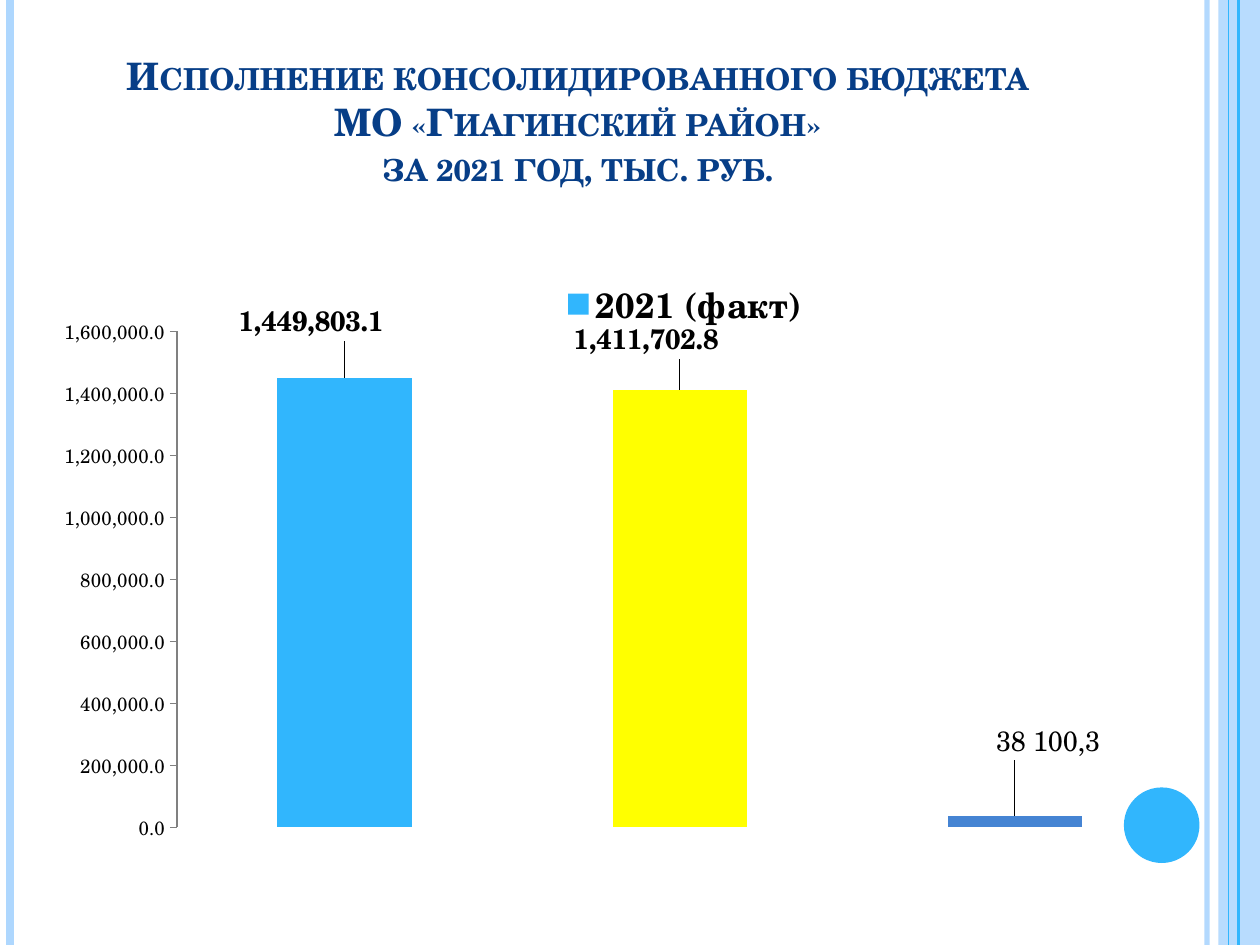
"""Build the slide on consolidated budget execution with a column chart."""
from lxml import etree
from pptx import Presentation
from pptx.chart.data import CategoryChartData
from pptx.dml.color import RGBColor
from pptx.enum.chart import XL_CHART_TYPE, XL_LABEL_POSITION, XL_LEGEND_POSITION, XL_TICK_MARK
from pptx.enum.shapes import MSO_CONNECTOR, MSO_SHAPE
from pptx.enum.text import MSO_ANCHOR, MSO_AUTO_SIZE, PP_ALIGN
from pptx.oxml.ns import qn
from pptx.util import Inches, Pt

COLUMN, STRAIGHT = XL_CHART_TYPE.COLUMN_CLUSTERED, MSO_CONNECTOR.STRAIGHT
RECTANGLE, OVAL = MSO_SHAPE.RECTANGLE, MSO_SHAPE.OVAL
ABOVE, LEGEND_TOP = XL_LABEL_POSITION.OUTSIDE_END, XL_LEGEND_POSITION.TOP
TICK_OUT, TICK_NONE = XL_TICK_MARK.OUTSIDE, XL_TICK_MARK.NONE
BOTTOM, CENTER, NO_FIT = MSO_ANCHOR.BOTTOM, PP_ALIGN.CENTER, MSO_AUTO_SIZE.NONE

THEME = {
    "font": "TeX Gyre Schola",
    "pale": RGBColor.from_string("AED7FE"),
    "sky": RGBColor.from_string("31B6FD"),
    "yellow": RGBColor.from_string("FFFF00"),
    "blue": RGBColor.from_string("4584D3"),
    "navy": RGBColor.from_string("073E87"),
    "black": RGBColor.from_string("000000"),
    "grey": RGBColor.from_string("808080"),
    "title": Pt(21.6), "body": Pt(18), "axis": Pt(11), "legend": Pt(20), "label": Pt(16),
}


def apply_format(target, color=None, **values):
    for attribute, value in values.items():
        setattr(target, attribute, value)
    if color is not None:
        target.color.rgb = color


def place_manually(parent, index, **values):
    for old in parent.findall(qn("c:layout")):
        parent.remove(old)
    layout = etree.Element(qn("c:layout"))
    manual = etree.SubElement(layout, qn("c:manualLayout"))
    for tag, value in values.items():
        etree.SubElement(manual, qn(f"c:{tag}")).set("val", str(value))
    parent.insert(index, layout)


deck = Presentation()
deck.slide_width, deck.slide_height = Inches(10), Inches(7.5)
W, H = deck.slide_width, deck.slide_height
slide = deck.slides.add_slide(deck.slide_layouts[5])

translucent = []
band = slide.shapes.add_shape(RECTANGLE, int(W * 0.967), 0, int(W * 0.033), H)
marker = slide.shapes.add_shape(OVAL, int(W * 0.892), int(H * 0.8333), int(W * 0.06), int(W * 0.06))
for ornament, color in ((band, "pale"), (marker, "sky")):
    ornament.shadow.inherit = False
    ornament.fill.solid()
    ornament.fill.fore_color.rgb = THEME[color]
    ornament.line.fill.background()
translucent.append((band, 87))

stripes = ((0.958, "pale", 3, 93), (0.008, "pale", 4.5, 100),
           (0.983, "sky", 1.5, 100), (0.975, "sky", 0.75, 100))
for share, color, width, opacity in stripes:
    stripe = slide.shapes.add_connector(STRAIGHT, int(W * share), 0, int(W * share), H)
    apply_format(stripe.line, color=THEME[color], width=Pt(width))
    etree.SubElement(stripe._element.spPr, qn("a:effectLst"))
    if opacity < 100:
        translucent.append((stripe, opacity))

for ornament, opacity in translucent:
    tint = next(ornament._element.spPr.iter(qn("a:srgbClr")))
    etree.SubElement(tint, qn("a:alpha")).set("val", str(opacity * 1000))

budget = CategoryChartData(number_format="#,##0.0")
budget.categories = ["1", "2", "3"]
budget.add_series("2021 (факт)", (1449803.1, 1411702.8, 38100.3))
chart = slide.shapes.add_chart(COLUMN, int(W * 0.051), int(H * 0.2587),
                               int(W * 0.913), int(H * 0.6613), budget).chart
apply_format(chart, has_title=False, has_legend=True)
apply_format(chart.font, name=THEME["font"], size=THEME["body"], color=THEME["black"])
apply_format(chart.legend, position=LEGEND_TOP, include_in_layout=False)
apply_format(chart.legend.font, name=THEME["font"], size=THEME["legend"], bold=True,
             color=THEME["black"])
place_manually(chart.legend._element, 1, xMode="edge", yMode="edge", x=0.41, y=0.04)

chart.category_axis.visible = False
amounts = chart.value_axis
apply_format(amounts, minimum_scale=0, maximum_scale=1600000, major_unit=200000,
             has_major_gridlines=False, major_tick_mark=TICK_OUT, minor_tick_mark=TICK_NONE)
apply_format(amounts.format.line, color=THEME["grey"], width=Pt(0.75))
apply_format(amounts.tick_labels, number_format="#,##0.0", number_format_is_linked=False)
apply_format(amounts.tick_labels.font, name=THEME["font"], size=THEME["axis"], color=THEME["black"])

columns = chart.plots[0]
apply_format(columns, gap_width=150, vary_by_categories=False, has_data_labels=True)
apply_format(columns.data_labels, show_value=True, number_format="#,##0.0",
             number_format_is_linked=False, position=ABOVE)
apply_format(columns.data_labels.font, name=THEME["font"], size=THEME["label"], bold=True,
             color=THEME["black"])
execution = columns.series[0]
execution.format.fill.solid()
execution.format.fill.fore_color.rgb = THEME["sky"]
bars = (("sky", -0.03, -0.05, None), ("yellow", -0.03, -0.04, None),
        ("blue", 0.03, -0.08, "38 100,3"))
for index, (color, shift_x, shift_y, wording) in enumerate(bars):
    point = execution.points[index]
    if index:
        point.format.fill.solid()
        point.format.fill.fore_color.rgb = THEME[color]
    label = point.data_label
    if wording:
        label.text_frame.text = wording
        label_font = label.text_frame.paragraphs[0].runs[0].font
    else:
        label_font = label.font
    label.position = ABOVE
    apply_format(label_font, name=THEME["font"], size=THEME["label"], bold=not wording,
                 color=THEME["black"])
    label_entry = execution._element.findall(f".//{qn('c:dLbl')}")[index]
    place_manually(label_entry, 1, x=shift_x, y=shift_y)

plot_area = next(chart._chartSpace.iter(qn("c:plotArea")))
place_manually(plot_area, 0, layoutTarget="inner", xMode="edge", yMode="edge",
               x=0.069, y=0.139, w=0.902, h=0.794)

heading = slide.shapes.title
apply_format(heading, left=int(W * 0.05), top=int(H * 0.04),
             width=int(W * 0.817), height=int(H * 0.1667))
apply_format(heading.text_frame, vertical_anchor=BOTTOM, word_wrap=True, auto_size=NO_FIT,
             text="Исполнение консолидированного бюджета\vМО «Гиагинский район»\v"
                  "за 2021 год, тыс. руб.")
heading_lines = heading.text_frame.paragraphs[0]
heading_lines.alignment = CENTER
for run in heading_lines.runs:
    apply_format(run.font, name=THEME["font"], size=THEME["title"], bold=True, color=THEME["navy"])
    run.font._element.set("cap", "small")

deck.save("out.pptx")
